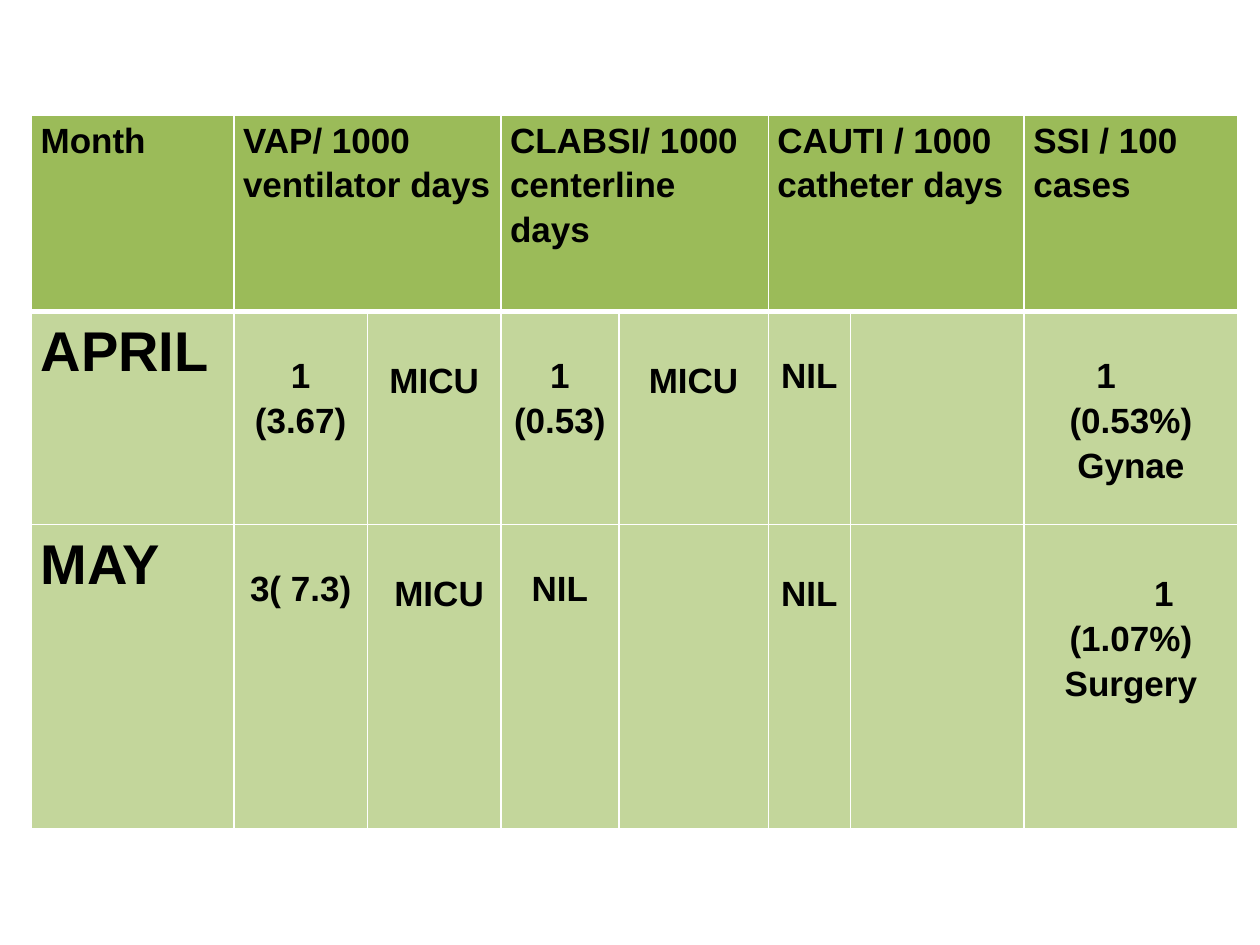
from lxml import etree
from pptx import Presentation
from pptx.dml.color import RGBColor
from pptx.enum.text import PP_ALIGN
from pptx.oxml.ns import qn
from pptx.util import Pt

LEFT, CENTER = PP_ALIGN.LEFT, PP_ALIGN.CENTER
BLANK_LAYOUT = 6
HEADER_FILL, BODY_FILL, RULE, INK = "9BBB59", "C3D69B", "FFFFFF", "000000"
COLUMN_WIDTHS = [115.7, 76.3, 76.3, 67.4, 85.4, 46.9, 99.4, 122]
ROW_HEIGHTS = [112, 121.7, 174]
UPPER, LOWER = 22.4, 25.4  # top insets of the figures in the body cells

# Header text by first column; every heading but the outer two spans two columns
HEADINGS = {
    0: "Month",
    1: "VAP/ 1000 ventilator days",
    3: "CLABSI/ 1000 centerline days",
    5: "CAUTI / 1000 catheter days",
    7: "SSI / 100 cases",
}

# Each month: column -> (top inset, paragraphs); a paragraph is (text, format)
MONTHS = {
    "APRIL": {
        1: (UPPER, [("1 (3.67)", {})]),
        2: (LOWER, [("MICU", {})]),
        3: (UPPER, [("1 (0.53)", {})]),
        4: (LOWER, [("MICU", {})]),
        5: (UPPER, [("NIL", {})]),
        7: (UPPER, [("1", {"align": LEFT, "indent": 36}),
                    ("(0.53%)", {}), ("Gynae", {})]),
    },
    "MAY": {
        1: (UPPER, [("3( 7.3)", {})]),
        2: (LOWER, [("MICU", {"indent": 5.6})]),
        3: (UPPER, [("NIL", {})]),
        5: (LOWER, [("NIL", {})]),
        7: (LOWER, [("1", {"align": LEFT, "indent": 69}),
                    ("(1.07%)", {}), ("Surgery", {})]),
    },
}


def rgb(value):
    return RGBColor.from_string(value)


def add_text(p, text, size=20, align=CENTER, indent=0, color=INK):
    p.alignment = align
    p.line_spacing = 1.15
    if indent:
        p._p.get_or_add_pPr().set("marL", str(Pt(indent)))
    r = p.add_run()
    r.text = text
    r.font.name = "Arial"
    r.font.size = Pt(size)
    r.font.bold = True
    r.font.color.rgb = rgb(color)


def fill_cell(cell, paragraphs, top=0):
    cell.margin_top = Pt(top)
    tf = cell.text_frame
    for i, (text, text_format) in enumerate(paragraphs):
        p = tf.add_paragraph() if i else tf.paragraphs[0]
        add_text(p, text, **text_format)


def style_cell(cell, fill, top_rule=1, bottom_rule=1):
    """Set the fill, insets and white borders of a cell."""
    cell.margin_left = cell.margin_right = Pt(5.2)
    cell.margin_top = cell.margin_bottom = 0
    cell.fill.solid()
    cell.fill.fore_color.rgb = rgb(fill)
    tcPr = cell._tc.get_or_add_tcPr()
    rules = {"lnL": 1, "lnR": 1, "lnT": top_rule, "lnB": bottom_rule}
    for i, (side, width) in enumerate(rules.items()):
        ln = etree.Element(qn(f"a:{side}"), w=str(Pt(width)))
        solid = etree.SubElement(ln, qn("a:solidFill"))
        etree.SubElement(solid, qn("a:srgbClr"), val=RULE)
        tcPr.insert(i, ln)


def add_infection_table(slide, left, top, width, height):
    frame = slide.shapes.add_table(
        len(ROW_HEIGHTS), len(COLUMN_WIDTHS),
        Pt(left), Pt(top), Pt(width), Pt(height))
    table = frame.table
    table.horz_banding = False
    for column, share in zip(table.columns, COLUMN_WIDTHS):
        column.width = Pt(share * width / sum(COLUMN_WIDTHS))
    for row, share in zip(table.rows, ROW_HEIGHTS):
        row.height = Pt(share * height / sum(ROW_HEIGHTS))

    for r, row in enumerate(table.rows):
        for cell in row.cells:
            style_cell(cell, BODY_FILL if r else HEADER_FILL,
                       top_rule=3 if r == 1 else 1,
                       bottom_rule=1 if r else 3)

    for c, heading in HEADINGS.items():
        cell = table.cell(0, c)
        if c in (1, 3, 5):
            cell.merge(table.cell(0, c + 1))
        fill_cell(cell, [(heading, {"align": LEFT})])

    for r, (month, entries) in enumerate(MONTHS.items(), start=1):
        fill_cell(table.cell(r, 0), [(month, {"size": 32, "align": LEFT})])
        for c, (inset, paragraphs) in entries.items():
            fill_cell(table.cell(r, c), paragraphs, top=inset)


def main():
    prs = Presentation()
    prs.slide_width, prs.slide_height = Pt(720), Pt(540)
    slide = prs.slides.add_slide(prs.slide_layouts[BLANK_LAYOUT])
    add_infection_table(slide, 18, 66, sum(COLUMN_WIDTHS), sum(ROW_HEIGHTS))
    prs.save("out.pptx")


if __name__ == "__main__":
    main()
